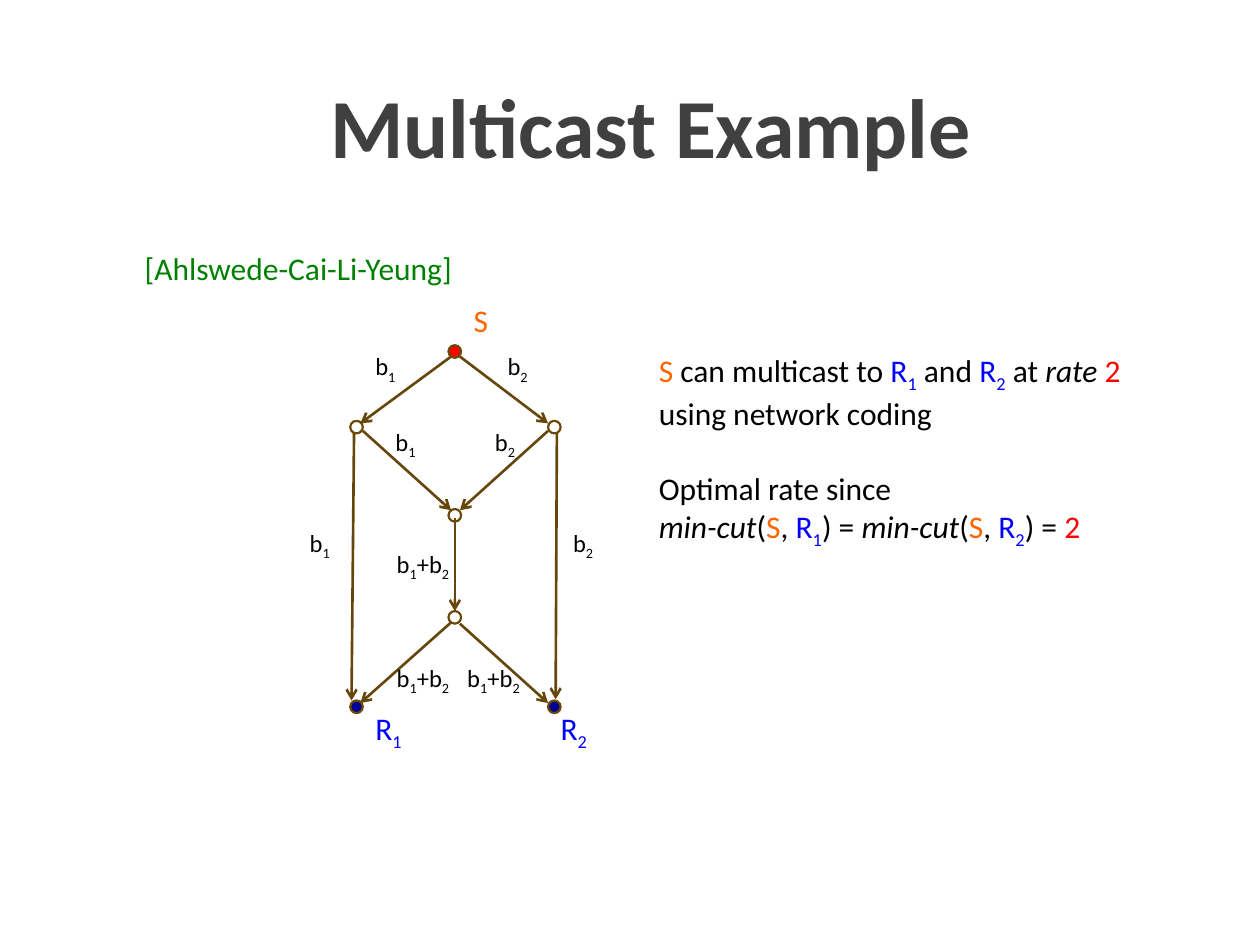
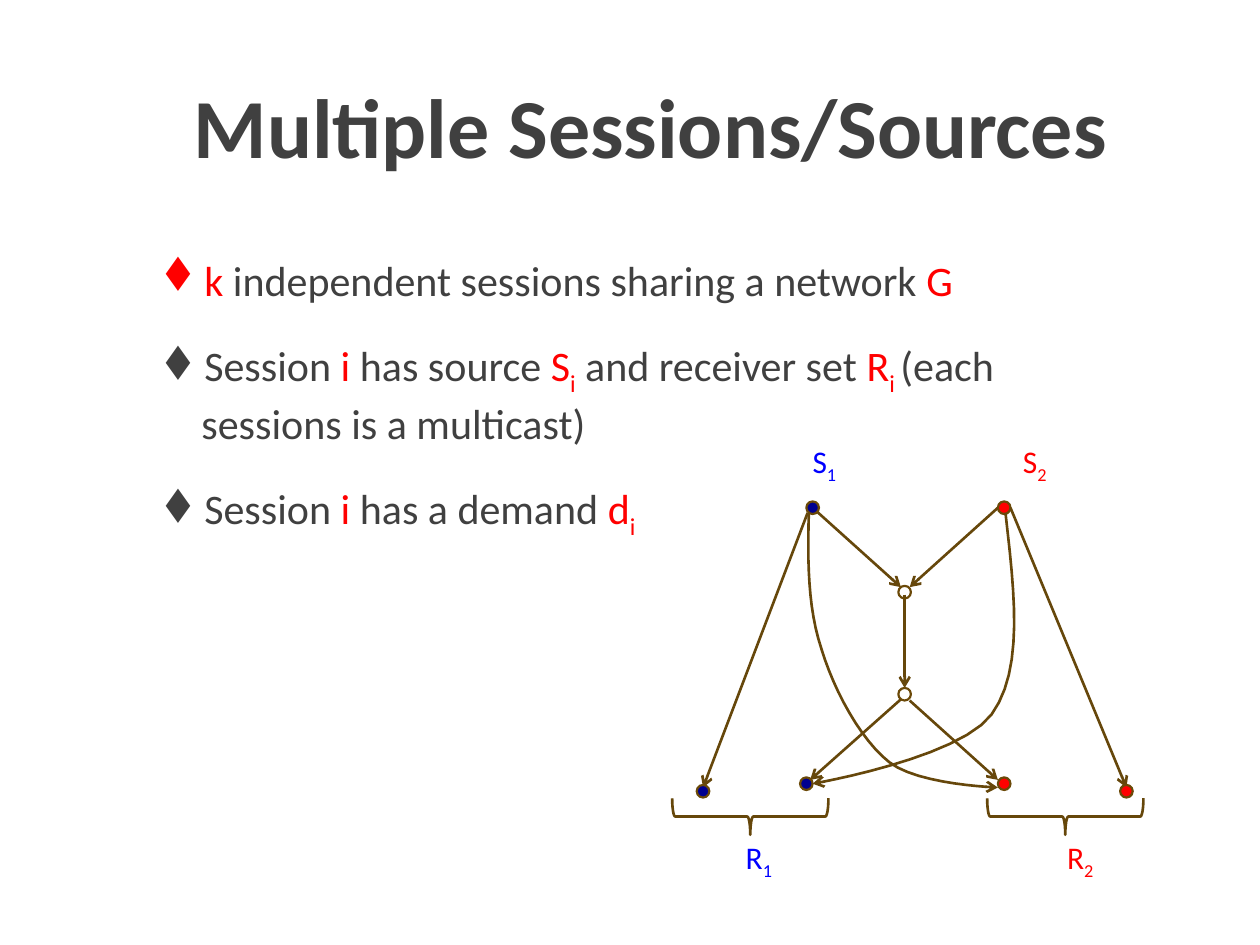
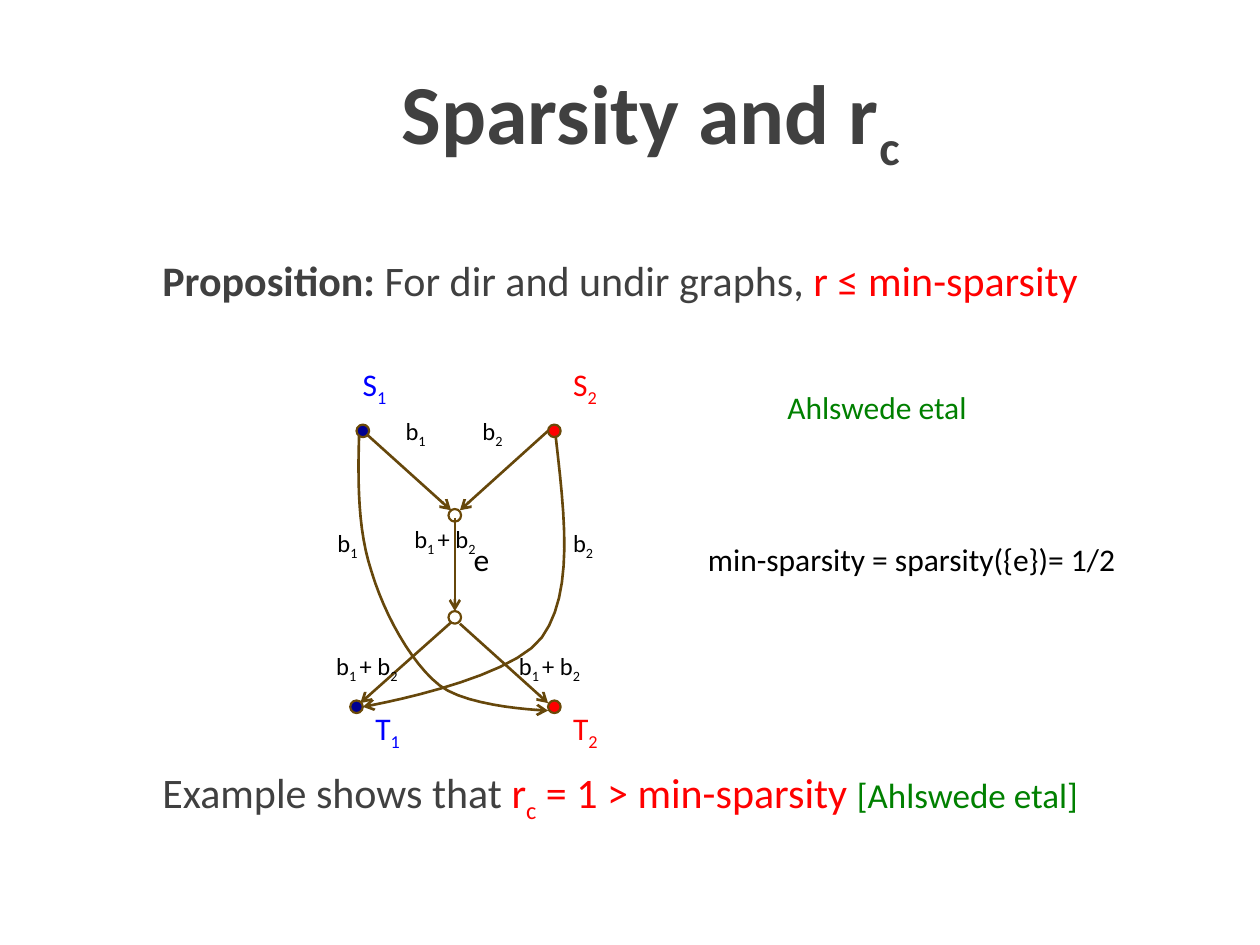
"""Build three slides on network coding: multicast, multiple sessions and sparsity."""
from dataclasses import dataclass
from typing import NamedTuple

from lxml import etree
from pptx import Presentation
from pptx.dml.color import RGBColor
from pptx.enum.shapes import MSO_CONNECTOR, MSO_SHAPE
from pptx.enum.text import MSO_ANCHOR, PP_ALIGN
from pptx.oxml.ns import qn
from pptx.util import Inches, Pt

STRAIGHT = MSO_CONNECTOR.STRAIGHT
OVAL = MSO_SHAPE.OVAL
LEFT_BRACE = MSO_SHAPE.LEFT_BRACE
CENTER = PP_ALIGN.CENTER
MIDDLE = MSO_ANCHOR.MIDDLE

FONT = "Calibri"
BULLET_FONT = "Wingdings"
BULLET_DIAMOND = "t"
COLORS = {
    "black": "000000",
    "gray": "404040",
    "red": "FF0000",
    "orange": "FF6600",
    "blue": "0000FF",
    "navy": "000090",
    "green": "008000",
    "outline": "6B4908",
    "edge": "66470B",
}
NODE_SIZE = 0.1
BULLET_INDENT = 0.31
CURVE_STEPS = 12
SESSION_SHIFT = (3.57, 0.61)


class Span(NamedTuple):
    """A run of text with one look."""

    text: str
    color: str = "black"
    subscript: bool = False
    bold: bool = False
    italic: bool = False
    size: float | None = None


class Para(NamedTuple):
    """A paragraph made of spans."""

    spans: tuple[Span, ...]
    before: float = 0
    bullet: bool = False


@dataclass(frozen=True)
class Text:
    """A text box; the default size suits a bit label on an edge."""

    left: float
    top: float
    paras: tuple[Para, ...]
    width: float = 0.52
    height: float = 0.34
    size: float = 14


class Node(NamedTuple):
    """A network node, hollow unless it has a colour."""

    left: float
    top: float
    color: str | None = None


class Edge(NamedTuple):
    """A straight arrow between two points."""

    x1: float
    y1: float
    x2: float
    y2: float


Point = tuple[float, float]
Curve = tuple[Point, ...]


def symbol(name: str, index: str, color: str = "black") -> tuple[Span, ...]:
    """Return a name followed by its subscript."""
    return Span(name, color), Span(index, color, subscript=True)


def label(left: float, top: float, *spans: Span) -> Text:
    """Return a small label on an edge."""
    return Text(left, top, (Para(spans),))


def caption(left: float, top: float, *spans: Span, width: float = 0.52) -> Text:
    """Return a larger one-line text."""
    return Text(left, top, (Para(spans),), width, 0.4, 18)


def body(*paras: Para) -> Text:
    """Return the main text of a slide."""
    return Text(1.19, 1.97, paras, 7.95, 4.73, 24)


B1, B2 = symbol("b", "1"), symbol("b", "2")
TIGHT_SUM = B1 + symbol("+b", "2")
LOOSE_SUM = symbol("b", "1 ") + symbol("+ b", "2")
S = Span("S", "orange")
R1, R2 = symbol("R", "1", "blue"), symbol("R", "2", "blue")
MIN_CUT = Span("min-cut", italic=True)

CORE_NODES = (Node(3.56, 4.04), Node(3.56, 4.85))
CORE_EDGES = (
    Edge(2.88, 3.42, 3.58, 4.05),
    Edge(4.35, 3.42, 3.65, 4.05),
    Edge(3.61, 4.11, 3.61, 4.85),
    Edge(3.58, 4.94, 2.86, 5.58),
    Edge(3.65, 4.95, 4.35, 5.58),
)
SESSION_NODES = (
    Node(2.83, 3.37, "navy"),
    Node(4.35, 3.37, "red"),
    Node(2.78, 5.56, "navy"),
    Node(4.35, 5.56, "red"),
)
SESSION_LABELS = (
    caption(2.78, 2.85, *symbol("S", "1", "blue")),
    caption(4.45, 2.85, *symbol("S", "2", "red")),
)
SESSION_CURVES: tuple[Curve, ...] = (
    ((2.85, 3.46), (2.84, 3.84), (2.84, 4.21), (2.95, 4.54), (3.05, 4.87),
     (3.26, 5.26), (3.49, 5.44), (3.72, 5.62), (4.35, 5.64), (4.35, 5.64)),
    ((4.41, 3.46), (4.48, 4.08), (4.56, 4.7), (4.3, 5.06),
     (4.04, 5.41), (2.88, 5.61), (2.88, 5.61)),
)


def rgb(name: str) -> RGBColor:
    """Look up a named colour."""
    return RGBColor.from_string(COLORS[name])


def add_bullet(para) -> None:
    """Give a paragraph a hanging diamond bullet."""
    properties = para._p.get_or_add_pPr()
    properties.set("marL", str(Inches(BULLET_INDENT)))
    properties.set("indent", str(-Inches(BULLET_INDENT)))
    font = etree.SubElement(properties, qn("a:buFont"))
    font.set("typeface", BULLET_FONT)
    font.set("charset", "2")
    etree.SubElement(properties, qn("a:buChar")).set("char", BULLET_DIAMOND)


def add_span(para, span: Span, size: float) -> None:
    """Append one run to a paragraph."""
    run = para.add_run()
    run.text = span.text
    font = run.font
    font.name = FONT
    font.size = Pt(span.size or size)
    font.bold = span.bold
    font.italic = span.italic
    font.color.rgb = rgb(span.color)
    if span.subscript:
        run._r.get_or_add_rPr().set("baseline", "-25000")


def draw_text(page, text: Text, dx: float = 0, dy: float = 0):
    """Draw a text box and return its frame."""
    box = page.shapes.add_textbox(
        Inches(text.left + dx), Inches(text.top + dy), Inches(text.width), Inches(text.height)
    )
    frame = box.text_frame
    frame.word_wrap = True
    for index, content in enumerate(text.paras):
        para = frame.add_paragraph() if index else frame.paragraphs[0]
        if content.bullet:
            add_bullet(para)
        if content.before:
            para.space_before = Pt(content.before)
        for span in content.spans:
            add_span(para, span, text.size)
    return frame


def draw_title(page, *spans: Span) -> None:
    """Draw the centred slide title."""
    frame = draw_text(page, Text(1.19, 0.3, (Para(spans),), 7.95, 1.46, 48))
    frame.vertical_anchor = MIDDLE
    para = frame.paragraphs[0]
    para.alignment = CENTER
    para.line_spacing = Pt(52)


def style_outline(shape, color: str, width: float) -> None:
    """Leave a shape hollow and flat, with a coloured outline."""
    shape.shadow.inherit = False
    shape.fill.background()
    shape.line.color.rgb = rgb(color)
    shape.line.width = Pt(width)


def add_arrowhead(line) -> None:
    """Put an open arrowhead at the end of a line."""
    etree.SubElement(line._get_or_add_ln(), qn("a:tailEnd")).set("type", "arrow")


def draw_node(page, node: Node, dx: float = 0, dy: float = 0) -> None:
    """Draw one network node."""
    shape = page.shapes.add_shape(
        OVAL, Inches(node.left + dx), Inches(node.top + dy), Inches(NODE_SIZE), Inches(NODE_SIZE)
    )
    style_outline(shape, "outline", 1.25)
    if node.color:
        shape.fill.solid()
        shape.fill.fore_color.rgb = rgb(node.color)


def draw_edge(page, edge: Edge, dx: float = 0, dy: float = 0) -> None:
    """Draw one straight arrow."""
    connector = page.shapes.add_connector(
        STRAIGHT, Inches(edge.x1 + dx), Inches(edge.y1 + dy),
        Inches(edge.x2 + dx), Inches(edge.y2 + dy),
    )
    connector.line.color.rgb = rgb("edge")
    connector.line.width = Pt(1.5)
    add_arrowhead(connector.line)
    etree.SubElement(connector._element.spPr, qn("a:effectLst"))


def bezier(controls: Curve, t: float) -> Point:
    """Return the point at t on a cubic curve."""
    weights = ((1 - t) ** 3, 3 * t * (1 - t) ** 2, 3 * t * t * (1 - t), t ** 3)
    x, y = (sum(w * p[axis] for w, p in zip(weights, controls)) for axis in (0, 1))
    return x, y


def draw_curve(page, curve: Curve, dx: float = 0, dy: float = 0) -> None:
    """Draw a curved arrow through joined cubic segments."""
    points = [
        bezier(curve[start:start + 4], step / CURVE_STEPS)
        for start in range(0, len(curve) - 1, 3)
        for step in range(1, CURVE_STEPS + 1)
    ]
    x, y = curve[0]
    builder = page.shapes.build_freeform(Inches(x + dx), Inches(y + dy))
    builder.add_line_segments(
        [(Inches(px + dx), Inches(py + dy)) for px, py in points], close=False
    )
    shape = builder.convert_to_shape()
    style_outline(shape, "edge", 1.5)
    add_arrowhead(shape.line)


def draw_brace(page, left: float) -> None:
    """Draw a brace that opens upwards under a receiver set."""
    shape = page.shapes.add_shape(
        LEFT_BRACE, Inches(left), Inches(5.86), Inches(0.29), Inches(1.24)
    )
    shape.rotation = 270
    style_outline(shape, "edge", 1.5)


def draw_network(page, nodes: tuple[Node, ...], edges: tuple[Edge, ...] = (),
                 dx: float = 0, dy: float = 0) -> None:
    """Draw the butterfly core with further edges and nodes, nodes in front."""
    for edge in CORE_EDGES + edges:
        draw_edge(page, edge, dx, dy)
    for node in CORE_NODES + nodes:
        draw_node(page, node, dx, dy)


def draw_sessions(page, dx: float = 0, dy: float = 0) -> None:
    """Draw the butterfly network of two sessions."""
    draw_network(page, SESSION_NODES, dx=dx, dy=dy)
    for curve in SESSION_CURVES:
        draw_curve(page, curve, dx, dy)
    for text in SESSION_LABELS:
        draw_text(page, text, dx, dy)


def build_multicast(page) -> None:
    """Build the multicast example."""
    draw_title(page, Span("Multicast Example", "gray", bold=True))
    draw_network(
        page,
        (Node(3.56, 2.74, "red"), Node(2.78, 3.34), Node(4.35, 3.34),
         Node(2.78, 5.56, "navy"), Node(4.35, 5.56, "navy")),
        (Edge(3.58, 2.83, 2.86, 3.36), Edge(3.65, 2.83, 4.35, 3.36),
         Edge(2.81, 3.43, 2.79, 5.56), Edge(4.42, 3.43, 4.41, 5.55)),
    )
    explanation = (
        Para((S, Span(" can multicast to "), *R1, Span(" and "), *R2, Span(" at "),
              Span("rate ", italic=True), Span("2", "red"))),
        Para((Span("using network coding"),)),
        Para((Span("Optimal rate since"),), before=21),
        Para((MIN_CUT, Span("("), S, Span(", "), *R1, Span(") = "),
              MIN_CUT, Span("("), S, Span(", "), *R2, Span(") = "), Span("2", "red"))),
    )
    for text in (
        caption(3.66, 2.34, S),
        caption(2.88, 5.58, *R1),
        caption(4.35, 5.58, *R2),
        label(2.88, 2.74, *B1),
        label(3.93, 2.74, *B2),
        label(2.36, 4.14, *B1),
        label(4.45, 4.14, *B2),
        label(3.04, 3.34, *B1),
        label(3.83, 3.34, *B2),
        *(Text(left, top, (Para(TIGHT_SUM),), width=0.69)
          for left, top in ((3.05, 4.31), (3.05, 5.21), (3.61, 5.21))),
        Text(5.13, 2.74, explanation, 4.01, 1.92, 18),
        caption(1.05, 1.93, Span("[Ahlswede-Cai-Li-Yeung]", "green"), width=2.78),
    ):
        draw_text(page, text)


def build_sessions(page) -> None:
    """Build the slide on multiple sessions."""
    draw_title(page, Span("Multiple Sessions/Sources", "gray", bold=True))
    session = Span("Session ", "gray")
    draw_text(page, body(
        Para((Span("k", "red"), Span(" independent sessions sharing a network ", "gray"),
              Span("G", "red")), bullet=True),
        Para((session, Span("i ", "red"), Span("has source ", "gray"), *symbol("S", "i", "red"),
              Span(" and receiver set ", "gray"), *symbol("R", "i ", "red"),
              Span("(each sessions is a multicast)", "gray")), 20, True),
        Para((session, Span("i", "red"), Span(" has a demand ", "gray"),
              *symbol("d", "i", "red")), 20, True),
    ))
    draw_sessions(page, *SESSION_SHIFT)
    for edge in (Edge(6.41, 4.07, 5.58, 6.25), Edge(8.02, 4.03, 8.94, 6.25)):
        draw_edge(page, edge)
    for node in (Node(5.53, 6.23, "navy"), Node(8.89, 6.23, "red")):
        draw_node(page, node)
    for left in (5.81, 8.31):
        draw_brace(page, left)
    draw_text(page, caption(5.82, 6.6, *R1))
    draw_text(page, caption(8.37, 6.6, *symbol("R", "2", "red")))


def build_sparsity(page) -> None:
    """Build the slide on sparsity."""
    draw_title(page, Span("Sparsity and r", "gray", bold=True),
               Span("c", "gray", subscript=True, bold=True))
    draw_text(page, body(
        Para((Span("Proposition: ", "gray", bold=True),
              Span("For dir and undir graphs, ", "gray"), Span("r ≤ min-sparsity", "red"))),
        Para((Span("Example shows that ", "gray"), *symbol("r", "c", "red"),
              Span(" = 1 > min-sparsity ", "red"),
              Span("[Ahlswede etal]", "green", size=20)), before=264),
    ))
    draw_sessions(page)
    for text in (
        caption(2.88, 5.58, *symbol("T", "1", "blue")),
        caption(4.45, 5.58, *symbol("T", "2", "red")),
        caption(6.15, 3.03, Span("Ahlswede etal", "green"), width=1.91),
        caption(3.66, 4.24, Span("e"), width=0.59),
        caption(5.52, 4.24, Span("min-sparsity = sparsity({e})= 1/2"), width=3.62),
        label(3.12, 3.25, *B1),
        label(3.73, 3.25, *B2),
        label(2.58, 4.14, *B1),
        label(4.45, 4.14, *B2),
        *(Text(left, top, (Para(LOOSE_SUM),), width=1.07)
          for left, top in ((3.19, 4.11), (2.57, 5.12), (4.02, 5.12))),
    ):
        draw_text(page, text)


def main() -> None:
    """Build and save the deck."""
    deck = Presentation()
    deck.slide_width, deck.slide_height = Inches(10), Inches(7.5)
    for build in (build_multicast, build_sessions, build_sparsity):
        build(deck.slides.add_slide(deck.slide_layouts[6]))
    deck.save("out.pptx")


if __name__ == "__main__":
    main()
